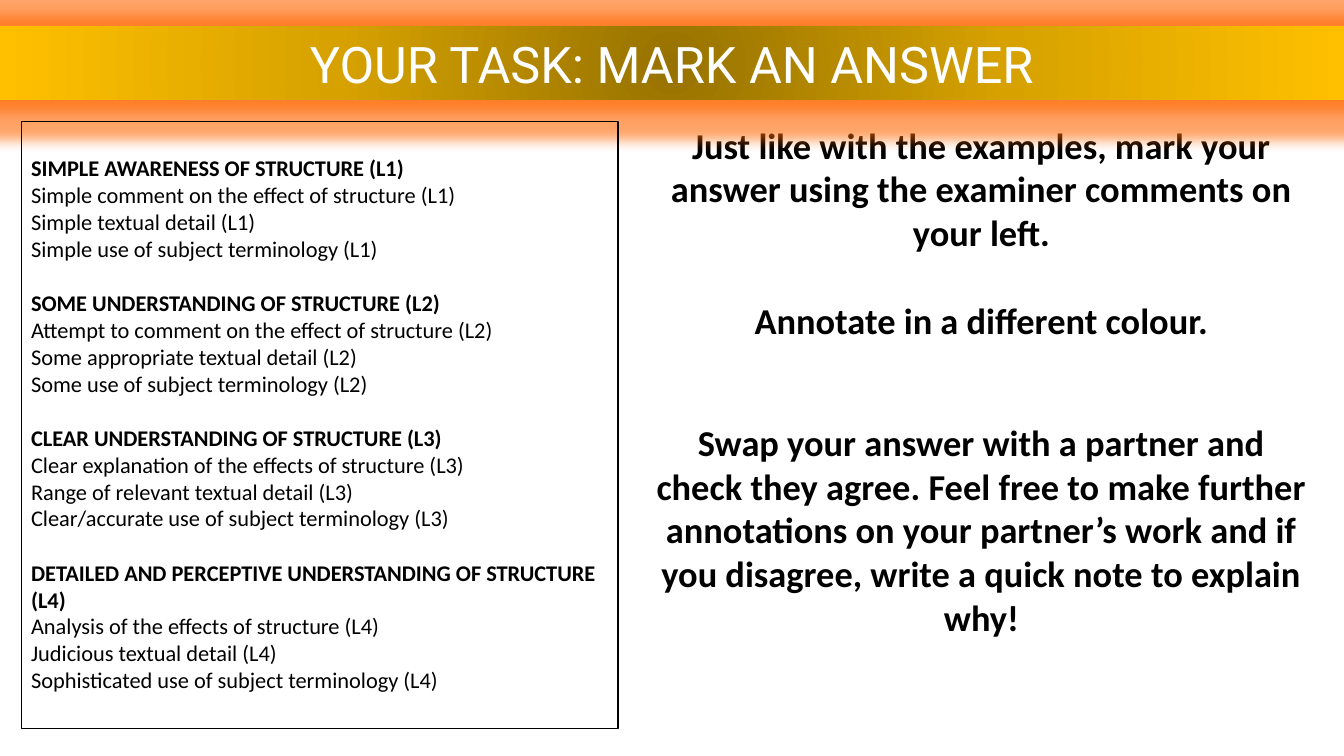
from lxml.etree import SubElement
from pptx import Presentation
from pptx.dml.color import RGBColor
from pptx.enum.shapes import MSO_SHAPE as Shape
from pptx.enum.text import MSO_ANCHOR as Anchor, PP_ALIGN as Align
from pptx.oxml.ns import qn
from pptx.util import Inches, Pt

BLACK = RGBColor(0x00, 0x00, 0x00)
WHITE = RGBColor(0xFF, 0xFF, 0xFF)
GOLD_STOPS = [
    (0, RGBColor(0x97, 0x72, 0x00)),
    (50, RGBColor(0xD7, 0xA2, 0x00)),
    (100, RGBColor(0xFF, 0xC0, 0x00)),
]
GLOW = RGBColor(0xFF, 0x66, 0x00)

LEVELS = [
    ("SIMPLE AWARENESS OF STRUCTURE (L1)", [
        "Simple comment on the effect of structure (L1)",
        "Simple textual detail (L1)",
        "Simple use of subject terminology (L1)",
    ]),
    ("SOME UNDERSTANDING OF STRUCTURE (L2)", [
        "Attempt to comment on the effect of structure (L2)",
        "Some appropriate textual detail (L2)",
        "Some use of subject terminology (L2)",
    ]),
    ("CLEAR UNDERSTANDING OF STRUCTURE (L3)", [
        "Clear explanation of the effects of structure (L3)",
        "Range of relevant textual detail (L3)",
        "Clear/accurate use of subject terminology (L3)",
    ]),
    ("DETAILED AND PERCEPTIVE UNDERSTANDING OF STRUCTURE (L4)", [
        "Analysis of the effects of structure (L4)",
        "Judicious textual detail (L4)",
        "Sophisticated use of subject terminology (L4)",
    ]),
]
MARKING_TASK = [
    "Just like with the examples, mark your answer using the examiner comments on your left.",
    "Annotate in a different colour.",
]
SWAP_TASK = [
    "Swap your answer with a partner and check they agree. Feel free to make further "
    "annotations on your partner’s work and if you disagree, write a quick note to explain why!",
]


class TaskSlide:
    """Draws the elements of a marking task on one slide."""

    def __init__(self, slide):
        self.slide = slide
        self.title_font = "Roboto"
        self.body_font = "Calibri"
        self.criteria_size = 16
        self.task_size = 26
        self.line_height = 1.22

    def rectangle(self, left, top, width, height, line_color=None):
        box = self.slide.shapes.add_shape(
            Shape.RECTANGLE, Inches(left), Inches(top), Inches(width), Inches(height))
        box.shadow.inherit = False
        box.fill.background()
        if line_color is None:
            box.line.fill.background()
        else:
            box.line.color.rgb = line_color
            box.line.width = Pt(0.75)
        box.text_frame.word_wrap = True
        box.text_frame.vertical_anchor = Anchor.TOP
        return box

    def add_text(self, frame, index, text, size, font, color=BLACK, bold=False,
                 align=Align.LEFT, gap=0):
        para = frame.add_paragraph() if index else frame.paragraphs[0]
        para.alignment = align
        para.space_before = Pt(gap)
        span = para.add_run()
        span.text = text
        span.font.size = Pt(size)
        span.font.name = font
        span.font.bold = bold
        span.font.color.rgb = color

    def add_color(self, parent, color):
        return SubElement(parent, qn("a:srgbClr"), val=str(color))

    def banner(self, text, left, top, width, height):
        box = self.rectangle(left, top, width, height)
        box.text_frame.vertical_anchor = Anchor.MIDDLE
        self.add_text(box.text_frame, 0, text, 36, self.title_font, WHITE, align=Align.CENTER)

        properties = box.element.spPr
        fill = properties.find(qn("a:noFill"))
        fill.tag = qn("a:gradFill")
        stops = SubElement(fill, qn("a:gsLst"))
        for position, color in GOLD_STOPS:
            stop = SubElement(stops, qn("a:gs"), pos=str(position * 1000))
            self.add_color(stop, color)
        circle = SubElement(fill, qn("a:path"), path="circle")
        SubElement(circle, qn("a:fillToRect"), l="50000", t="50000", r="50000", b="50000")

        effects = properties.find(qn("a:effectLst"))
        glow = SubElement(effects, qn("a:glow"), rad=str(Pt(18)))
        SubElement(self.add_color(glow, GLOW), qn("a:alpha"), val="60000")

    def criteria(self, levels, left, top, width, height):
        frame = self.rectangle(left, top, width, height, BLACK).text_frame
        gap = self.criteria_size * self.line_height
        frame.margin_top = Inches(0.05) + Pt(gap)
        index = 0
        for heading, details in levels:
            self.add_text(frame, index, heading, self.criteria_size, self.body_font,
                          bold=True, gap=gap if index else 0)
            for offset, detail in enumerate(details, 1):
                self.add_text(frame, index + offset, detail, self.criteria_size, self.body_font)
            index += 1 + len(details)

    def instructions(self, texts, left, top, width, height):
        frame = self.rectangle(left, top, width, height, WHITE).text_frame
        gap = self.task_size * self.line_height
        for index, text in enumerate(texts):
            self.add_text(frame, index, text, self.task_size, self.body_font, bold=True,
                          align=Align.CENTER, gap=gap if index else 0)


def main():
    deck = Presentation()
    deck.slide_width = Inches(13.33)
    deck.slide_height = Inches(7.5)
    page = TaskSlide(deck.slides.add_slide(deck.slide_layouts[6]))
    page.instructions(MARKING_TASK, 6.39, 1.17, 6.69, 2.56)
    page.instructions(SWAP_TASK, 6.39, 4.12, 6.69, 2.56)
    page.banner("YOUR TASK: MARK AN ANSWER", 0, 0.26, 13.33, 0.73)
    page.criteria(LEVELS, 0.21, 1.21, 5.92, 6.02)
    deck.save("out.pptx")


if __name__ == "__main__":
    main()
